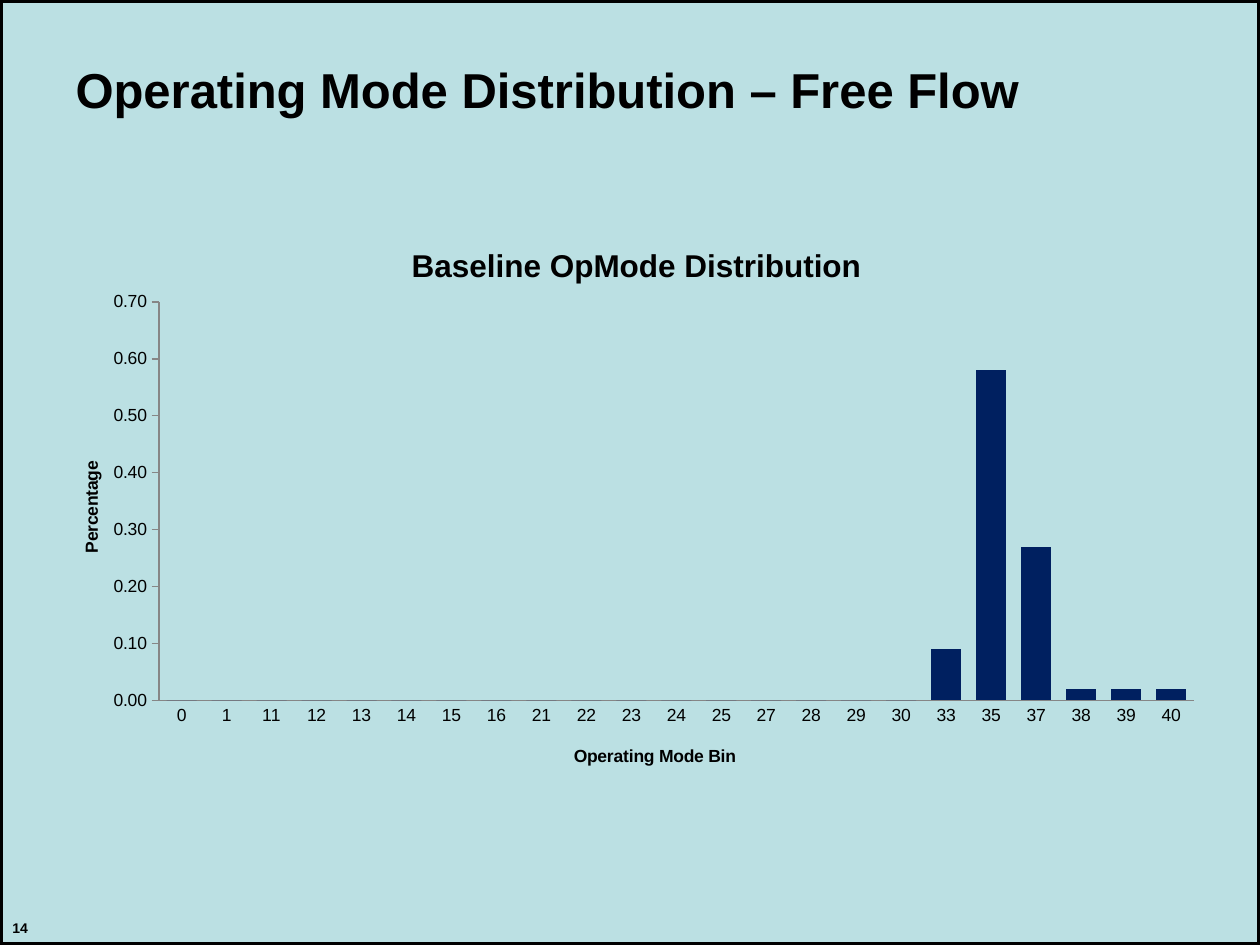
from dataclasses import dataclass

from pptx import Presentation
from pptx import util as u
from pptx.chart.data import CategoryChartData
from pptx.dml.color import RGBColor
from pptx.enum import chart as ch, shapes, text
from pptx.oxml import parse_xml
from pptx.oxml.ns import nsdecls


@dataclass(frozen=True)
class Theme:
    font: str = "Arial"
    ink: RGBColor = RGBColor(0, 0, 0)
    paper: RGBColor = RGBColor(0xBB, 0xE0, 0xE3)
    bar: RGBColor = RGBColor(0x00, 0x20, 0x60)
    axis: RGBColor = RGBColor(0x86, 0x86, 0x86)
    title: u.Pt = u.Pt(28)
    chart_title: u.Pt = u.Pt(18)
    label: u.Pt = u.Pt(10)
    small: u.Pt = u.Pt(8)


THEME = Theme()
WIDTH, HEIGHT = u.Inches(10), u.Inches(7.5)

BINS = [0, 1, 11, 12, 13, 14, 15, 16, 21, 22, 23, 24, 25, 27, 28, 29, 30,
        33, 35, 37, 38, 39, 40]
SHARES = {33: 0.09, 35: 0.58, 37: 0.27, 38: 0.02, 39: 0.02, 40: 0.02}


def box(left, top, width, height):
    """Turn shares of the slide into lengths."""
    return (round(left * WIDTH), round(top * HEIGHT),
            round(width * WIDTH), round(height * HEIGHT))


def style(font, size, bold=True):
    font.name, font.size, font.bold = THEME.font, size, bold
    font.color.rgb = THEME.ink


def write(sp, words, size):
    tf = sp.text_frame
    tf.word_wrap = True
    tf.vertical_anchor = text.MSO_ANCHOR.TOP
    p = tf.paragraphs[0]
    p.text = words
    p.alignment = text.PP_ALIGN.LEFT
    style(p.font, size)


def add_backdrop(slide, area):
    sp = slide.shapes.add_shape(shapes.MSO_SHAPE.RECTANGLE, *area)
    sp.shadow.inherit = False
    sp.fill.solid()
    sp.fill.fore_color.rgb = THEME.paper
    sp.line.color.rgb = THEME.ink
    sp.line.width = u.Pt(3)
    slide.shapes._spTree.insert(2, sp._element)  # behind the title


def add_title(slide, area, words):
    sp = slide.shapes.title
    sp.left, sp.top, sp.width, sp.height = area
    write(sp, words, THEME.title)


def add_page_number(slide, area, number):
    write(slide.shapes.add_textbox(*area), str(number), THEME.small)


def set_layout(parent, x, y, w=None, h=None):
    """Place a chart part by shares of the chart's size."""
    for old in parent.findall("{*}layout"):
        parent.remove(old)
    inner = '<c:layoutTarget val="inner"/>' if w else ""
    modes = '<c:xMode val="edge"/><c:yMode val="edge"/>'
    sizes = {"x": x, "y": y, "w": w, "h": h}
    values = "".join(f'<c:{k} val="{v}"/>' for k, v in sizes.items() if v)
    layout = parse_xml(f'<c:layout {nsdecls("c")}><c:manualLayout>{inner}'
                       f'{modes}{values}</c:manualLayout></c:layout>')
    tx = parent.find("{*}tx")
    parent.insert(0 if tx is None else parent.index(tx) + 1, layout)


def add_heading(owner, words, size, x, y):
    """Title a chart or an axis."""
    heading = owner.chart_title if hasattr(owner, "chart_title") else owner.axis_title
    p = heading.text_frame.paragraphs[0]
    p.text = words
    style(p.font, size)
    set_layout(heading._element, x, y)


def add_distribution(slide, area):
    data = CategoryChartData(number_format="0.00")
    data.categories = [str(b) for b in BINS]
    data.add_series("Series 1", [SHARES.get(b, 0) for b in BINS])
    chart = slide.shapes.add_chart(
        ch.XL_CHART_TYPE.COLUMN_CLUSTERED, *area, data).chart
    style(chart.font, THEME.label, bold=False)
    chart.has_legend = False

    # Bars
    plot = chart.plots[0]
    plot.gap_width = 50
    plot.vary_by_categories = False
    fill = plot.series[0].format.fill
    fill.solid()
    fill.fore_color.rgb = THEME.bar

    # Axes
    cat, val = chart.category_axis, chart.value_axis
    for axis in (cat, val):
        axis.has_major_gridlines = False
        axis.minor_tick_mark = ch.XL_TICK_MARK.NONE
        axis.format.line.color.rgb = THEME.axis
    cat.major_tick_mark = ch.XL_TICK_MARK.NONE
    val.major_tick_mark = ch.XL_TICK_MARK.OUTSIDE
    val.minimum_scale, val.maximum_scale, val.major_unit = 0, 0.7, 0.1
    val.tick_labels.number_format = "0.00"
    val.tick_labels.number_format_is_linked = False

    # Headings and plot area
    add_heading(chart, "Baseline OpMode Distribution", THEME.chart_title, 0.31, 0.05)
    add_heading(cat, "Operating Mode Bin", THEME.label, 0.45, 0.92)
    add_heading(val, "Percentage", THEME.label, 0.03, 0.43)
    set_layout(plot._element.getparent(), 0.1, 0.16, 0.88, 0.69)


def main():
    prs = Presentation()
    prs.slide_width, prs.slide_height = WIDTH, HEIGHT
    slide = prs.slides.add_slide(prs.slide_layouts[5])
    add_backdrop(slide, box(0, 0, 1, 1))
    add_title(slide, box(0.05, 0.056, 0.908, 0.144),
              "Operating Mode Distribution – Free Flow")
    add_page_number(slide, box(0, 0.967, 0.458, 0.044), 14)
    add_distribution(slide, box(0.033, 0.222, 0.933, 0.611))
    prs.save("out.pptx")


if __name__ == "__main__":
    main()
